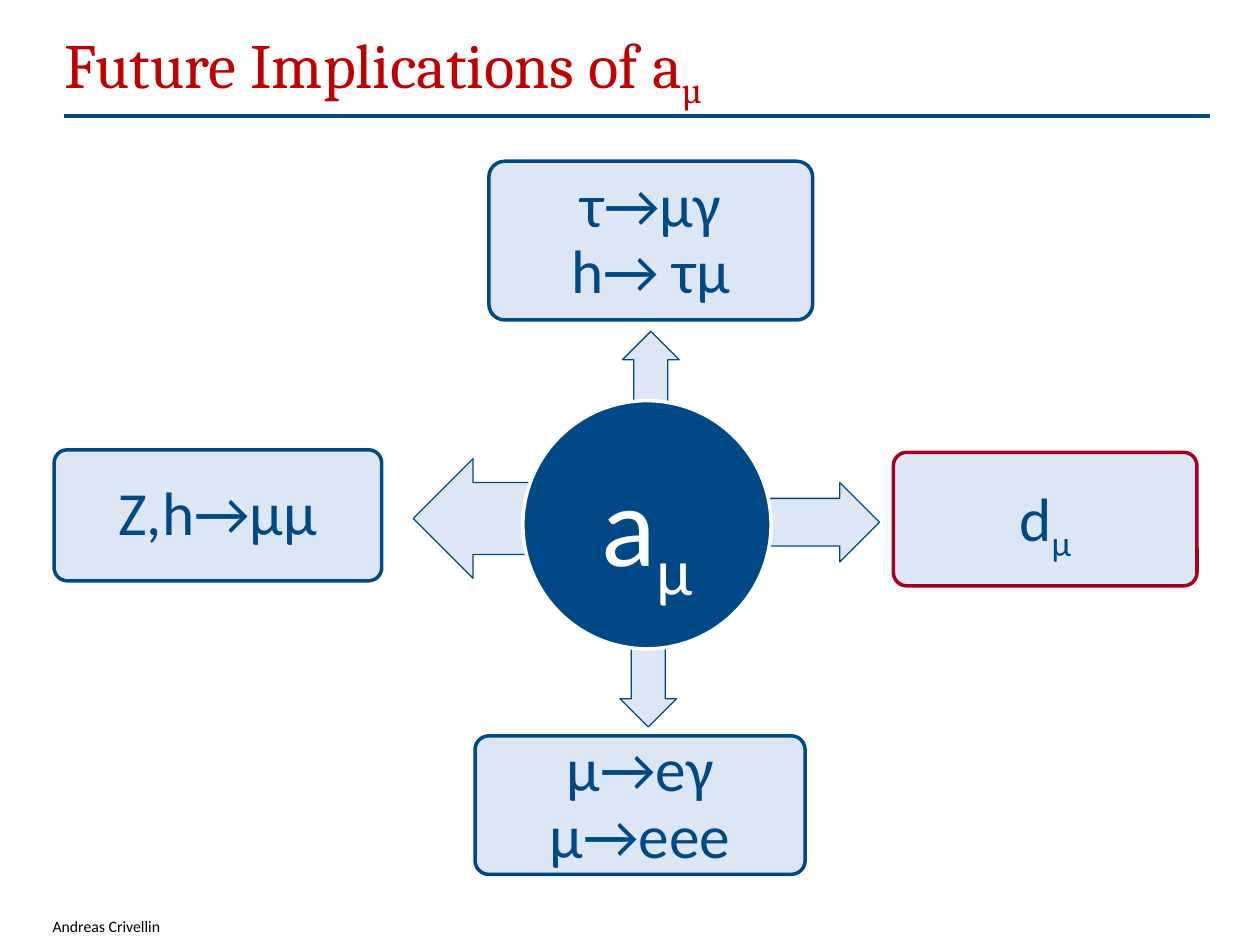
from dataclasses import dataclass

from lxml.etree import SubElement
from pptx import Presentation
from pptx.dml.color import RGBColor as RGB
from pptx.enum.shapes import MSO_CONNECTOR as Connector, MSO_SHAPE as Shape
from pptx.enum.text import MSO_ANCHOR as Anchor, PP_ALIGN as Align
from pptx.oxml.ns import qn
from pptx.util import Inches, Pt


@dataclass(frozen=True)
class Theme:
    navy: RGB = RGB.from_string("004986")
    pale: RGB = RGB.from_string("DCE6F4")
    crimson: RGB = RGB.from_string("A50021")
    red: RGB = RGB.from_string("C00000")
    white: RGB = RGB.from_string("FFFFFF")
    black: RGB = RGB.from_string("000000")
    heading: str = "Cambria"
    body: str = "Calibri"
    title_size: int = 36
    hub_size: int = 65
    box_size: int = 35
    footer_size: int = 9


def write(frame, lines, subscript="", *, font, size, color, align=Align.LEFT,
          anchor=Anchor.TOP, inset=0, spacing=1.0):
    frame.word_wrap = True
    frame.vertical_anchor = anchor
    frame.margin_left = frame.margin_right = Inches(inset)
    frame.margin_top = frame.margin_bottom = Inches(inset)
    paragraph = frame.paragraphs[0]
    paragraph.alignment = align
    paragraph.line_spacing = spacing

    def add_run(words):
        run = paragraph.add_run()
        run.text = words
        run.font.name, run.font.size = font, Pt(size)
        run.font.color.rgb = color
        return run

    for number, line in enumerate(lines.split("\n")):
        if number:
            paragraph.add_line_break()
        add_run(line)
    if subscript:
        add_run(subscript)._r.get_or_add_rPr().set("baseline", "-25000")


class Diagram:
    def __init__(self, slide, theme):
        self.slide, self.theme = slide, theme

    def text(self, place, lines, subscript="", **style):
        label = self.slide.shapes.add_textbox(*map(Inches, place))
        write(label.text_frame, lines, subscript, **style)

    def rule(self, left, right, y):
        rule = self.slide.shapes.add_connector(
            Connector.STRAIGHT, Inches(left), Inches(y), Inches(right), Inches(y))
        rule.line.color.rgb, rule.line.width = self.theme.navy, Pt(2.5)
        SubElement(rule._element.spPr, qn("a:effectLst"))

    def shape(self, preset, place, fill, outline, width, adjustments=()):
        shape = self.slide.shapes.add_shape(preset, *map(Inches, place))
        shape.shadow.inherit = False
        shape.fill.solid()
        shape.fill.fore_color.rgb = fill
        shape.line.color.rgb, shape.line.width = outline, Pt(width)
        for index, value in enumerate(adjustments):
            shape.adjustments[index] = value
        return shape

    def arrow(self, preset, place):
        self.shape(preset, place, self.theme.pale, self.theme.navy, 0.75, (0.6, 0.5))

    def box(self, place, lines, subscript="", outline=None):
        box = self.shape(Shape.ROUNDED_RECTANGLE, place, self.theme.pale,
                         outline or self.theme.navy, 2, (0.1,))
        write(box.text_frame, lines, subscript, font=self.theme.body,
              size=self.theme.box_size, color=self.theme.navy, align=Align.CENTER,
              anchor=Anchor.MIDDLE, inset=0.07, spacing=0.9)

    def hub(self, place, symbol, subscript):
        hub = self.shape(Shape.OVAL, place, self.theme.navy, self.theme.white, 2)
        write(hub.text_frame, symbol, subscript, font=self.theme.body,
              size=self.theme.hub_size, color=self.theme.white, align=Align.CENTER,
              anchor=Anchor.MIDDLE, inset=0.05, spacing=0.9)


def main():
    """Build the slide on the future implications of the muon anomaly."""
    deck = Presentation()
    deck.slide_width, deck.slide_height = Inches(10), Inches(7.5)
    theme = Theme()
    diagram = Diagram(deck.slides.add_slide(deck.slide_layouts[6]), theme)

    diagram.rule(0.51, 9.6, 0.92)
    diagram.text((0.51, 0.2, 8.46, 0.56), "Future Implications of a", "µ",
                 font=theme.heading, size=theme.title_size, color=theme.red)

    diagram.arrow(Shape.DOWN_ARROW, (4.92, 4.28, 0.45, 1.49))
    diagram.arrow(Shape.UP_ARROW, (4.94, 2.63, 0.45, 1.49))
    diagram.arrow(Shape.LEFT_ARROW, (3.28, 3.64, 1.62, 0.95))
    diagram.arrow(Shape.RIGHT_ARROW, (5.07, 3.83, 1.91, 0.63))
    diagram.hub((4.15, 3.18, 1.97, 1.97), "a", "µ")

    diagram.box((0.43, 3.57, 2.6, 1.04), "Z,h→µµ")
    diagram.box((7.09, 3.59, 2.41, 1.06), "d", "μ", outline=theme.crimson)
    diagram.box((3.77, 5.84, 2.62, 1.1), "µ→eγ\nµ→eee")
    diagram.box((3.88, 1.28, 2.57, 1.26), "τ→µγ\nh→ τµ")

    diagram.text((0.27, 7.28, 1, 0.2), "Andreas Crivellin", font=theme.body,
                 size=theme.footer_size, color=theme.black, align=Align.RIGHT)
    deck.save("out.pptx")


if __name__ == "__main__":
    main()
